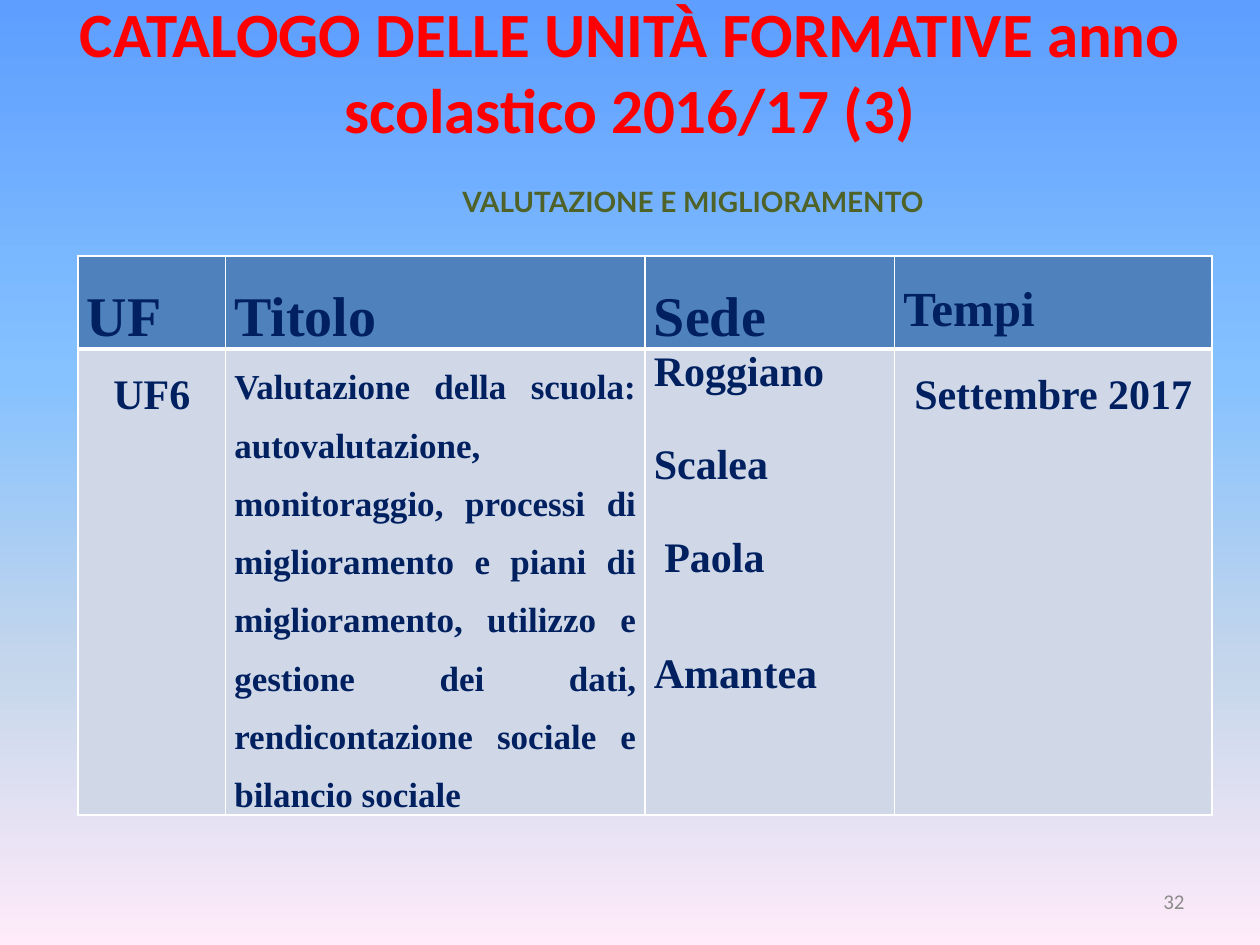
from lxml import etree
from pptx import Presentation
from pptx.dml.color import RGBColor
from pptx.enum.text import MSO_ANCHOR, MSO_AUTO_SIZE, PP_ALIGN
from pptx.oxml.ns import qn
from pptx.util import Inches, Pt

LEFT, CENTER, RIGHT, JUSTIFY = PP_ALIGN.LEFT, PP_ALIGN.CENTER, PP_ALIGN.RIGHT, PP_ALIGN.JUSTIFY
MIDDLE = MSO_ANCHOR.MIDDLE
NO_FIT = MSO_AUTO_SIZE.NONE
W, H = Inches(10), Inches(7.5)
SERIF = "Times New Roman"
NAVY, WHITE, HEADER, BODY = "002060", "FFFFFF", "4F81BD", "D0D8E8"
SKY = [(0, "5E9EFF"), (40, "85C2FF"), (70, "C4D6EB"), (100, "FFEBFA")]
COLUMNS = [13, 37, 22, 28]
ROWS = [9.87, 49.2]
HEADINGS = [("UF", 32), ("Titolo", 32), ("Sede", 32), ("Tempi", 28)]
TOPIC = ("Valutazione della scuola: autovalutazione, monitoraggio, processi di miglioramento "
         "e piani di miglioramento, utilizzo e gestione dei dati, rendicontazione sociale e "
         "bilancio sociale")
VENUES = ["Roggiano", "Scalea", " Paola", "Amantea"]


def box(x, y, w, h):
    """Turn percentages of the slide into a left, top, width, height box."""
    return [int(total * share / 100) for total, share in zip((W, H, W, H), (x, y, w, h))]


def color(value):
    """Return the colour for a hex string."""
    return RGBColor.from_string(value)


def add_run(p, text, size, font, hex_color, bold=True):
    """Append one formatted run to a paragraph."""
    r = p.add_run()
    r.text = text
    r.font.size, r.font.name, r.font.bold = Pt(size), font, bold
    r.font.color.rgb = color(hex_color)


def paint_background(s):
    """Fill the slide with the vertical sky gradient."""
    fill = s.background.fill
    fill.gradient()
    fill.gradient_angle = 270
    stops = s.background._cSld.find(".//" + qn("a:gsLst"))
    for old in list(stops):
        stops.remove(old)
    for share, value in SKY:
        stop = etree.SubElement(stops, qn("a:gs"), pos=str(share * 1000))
        etree.SubElement(stop, qn("a:srgbClr"), val=value)


def add_title(s, area):
    """Place the red title in its placeholder."""
    sp = s.shapes.title
    sp.left, sp.top, sp.width, sp.height = area
    tf = sp.text_frame
    tf.auto_size, tf.vertical_anchor = NO_FIT, MIDDLE
    p = tf.paragraphs[0]
    p.alignment = CENTER
    add_run(p, "CATALOGO DELLE UNITÀ FORMATIVE anno scolastico 2016/17 (3)", 36, "Calibri", "FF0000")
    p.add_line_break()


def add_label(s, area, text, size, font, hex_color, align, bold, wrap):
    """Place one line of text in a box."""
    tf = s.shapes.add_textbox(*area).text_frame
    tf.word_wrap, tf.vertical_anchor = wrap, MIDDLE
    p = tf.paragraphs[0]
    p.alignment = align
    add_run(p, text, size, font, hex_color, bold)


def style_cell(cell, fill, bottom):
    """Give a cell its margins, fill and white borders."""
    cell.margin_left = cell.margin_right = Inches(0.07)
    cell.margin_top = cell.margin_bottom = 0
    cell.fill.solid()
    cell.fill.fore_color.rgb = color(fill)
    widths = {"a:lnL": 1, "a:lnR": 1, "a:lnT": 1, "a:lnB": bottom}
    for i, (tag, width) in enumerate(widths.items()):
        line = etree.Element(qn(tag), w=str(Pt(width)))
        solid = etree.SubElement(line, qn("a:solidFill"))
        etree.SubElement(solid, qn("a:srgbClr"), val=WHITE)
        cell._tc.get_or_add_tcPr().insert(i, line)


def write_cell(cell, text, size, align=LEFT):
    """Write one paragraph at one and a half line spacing."""
    p = cell.text_frame.paragraphs[0]
    p.alignment, p.line_spacing = align, 1.5
    add_run(p, text, size, SERIF, NAVY)


def write_venues(cell):
    """List the venues with a line's gap between them."""
    tf = cell.text_frame
    for i, venue in enumerate(VENUES):
        p = tf.add_paragraph() if i else tf.paragraphs[0]
        p.space_before = Pt(26.5 if i else 0)
        if venue == VENUES[-1]:
            p.line_spacing = 1.5
        add_run(p, venue, 24, SERIF, NAVY)


def add_units_table(s, area):
    """Place the table of training units."""
    table = s.shapes.add_table(len(ROWS), len(COLUMNS), *area).table
    for column, share in zip(table.columns, COLUMNS):
        column.width = int(area[2] * share / 100)
    for row, share in zip(table.rows, ROWS):
        row.height = int(H * share / 100)
    for c, (heading, size) in enumerate(HEADINGS):
        style_cell(table.cell(0, c), HEADER, 3)
        style_cell(table.cell(1, c), BODY, 1)
        write_cell(table.cell(0, c), heading, size)
    write_cell(table.cell(1, 0), "UF6", 24, CENTER)
    write_cell(table.cell(1, 1), TOPIC, 20, JUSTIFY)
    write_venues(table.cell(1, 2))
    write_cell(table.cell(1, 3), "Settembre 2017", 24, CENTER)


def main():
    """Build and save the slide."""
    prs = Presentation()
    prs.slide_width, prs.slide_height = W, H
    s = prs.slides.add_slide(prs.slide_layouts[5])
    paint_background(s)
    add_title(s, box(5, 4, 90, 16.67))
    add_units_table(s, box(6.2, 27.07, 90, sum(ROWS)))
    add_label(s, box(71.7, 92.67, 23.3, 5.33), "32", 12, "Calibri", "8C8C8C", RIGHT, False, True)
    add_label(s, box(34.4, 18.8, 41.2, 4.93), "VALUTAZIONE E MIGLIORAMENTO", 16, "Lato",
              "4F6228", CENTER, True, False)
    prs.save("out.pptx")


if __name__ == "__main__":
    main()
